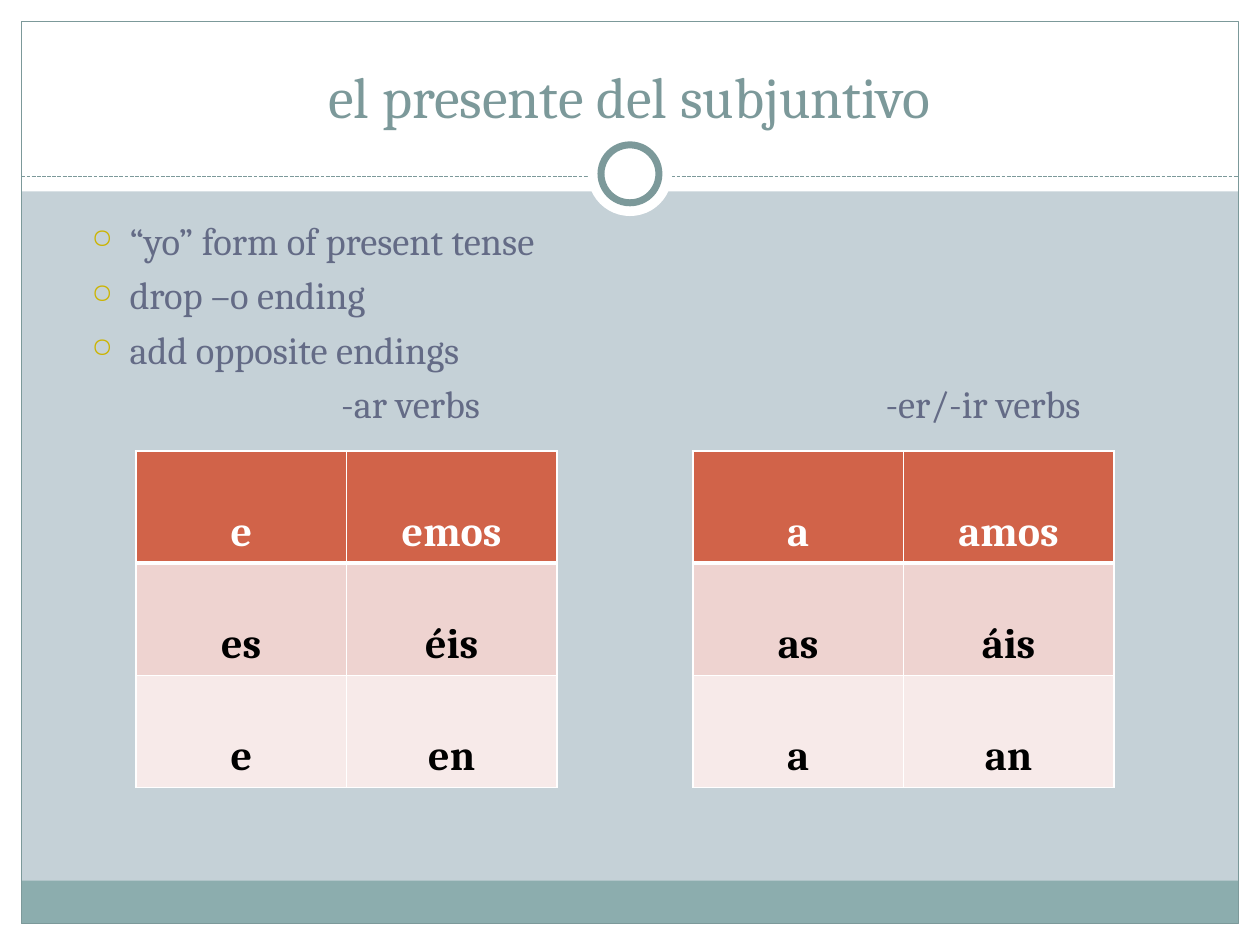
import pptx
import pptx.dml.color
import pptx.enum.dml
import pptx.enum.shapes
import pptx.enum.text
import pptx.oxml
import pptx.oxml.ns
import pptx.util
from lxml import etree

WIDTH, HEIGHT = 10, 7.5
MARGIN = 0.17
FONT = "Cambria"
WHITE, TEAL, FOOTER, BACKDROP = "FFFFFF", "7C999A", "8CADAE", "C5D1D7"
BODY, BULLET = "646B86", "CCB400"
ROW_FILLS = ["D16349", "EED3D0", "F7EAE9"]
ROW_COLORS = [WHITE, "000000", "000000"]

STEPS = ["“yo” form of present tense", "drop –o ending", "add opposite endings"]
# Label, label left, table left, endings
VERB_GROUPS = [
    ("-ar verbs", 2.61, 1.08, [["e", "emos"], ["es", "éis"], ["e", "en"]]),
    ("-er/-ir verbs", 6.93, 5.5, [["a", "amos"], ["as", "áis"], ["a", "an"]]),
]

inches = pptx.util.Inches
SHAPE = pptx.enum.shapes.MSO_SHAPE
ALIGN = pptx.enum.text.PP_ALIGN
ANCHOR = pptx.enum.text.MSO_ANCHOR


def color(value):
    return pptx.dml.color.RGBColor.from_string(value)


def add_xml(parent, tag, **attributes):
    element = etree.SubElement(parent, pptx.oxml.ns.qn(tag))
    for name, value in attributes.items():
        element.set(name, str(value))
    return element


def write_text(paragraph, text, size=22, ink=BODY, bold=False, align=ALIGN.LEFT):
    paragraph.alignment = align
    run = paragraph.add_run()
    run.text = text
    run.font.name = FONT
    run.font.size = pptx.util.Pt(size)
    run.font.bold = bold
    run.font.color.rgb = color(ink)


def add_text_frame(slide, left, top, width, height, anchor=ANCHOR.TOP):
    frame = slide.shapes.add_textbox(*map(inches, (left, top, width, height))).text_frame
    frame.word_wrap = True
    frame.vertical_anchor = anchor
    return frame


def add_panel(slide, left, top, width, height, kind=SHAPE.RECTANGLE,
              fill=None, line=None, weight=0.75):
    shape = slide.shapes.add_shape(kind, *map(inches, (left, top, width, height)))
    shape.shadow.inherit = False
    if fill:
        shape.fill.solid()
        shape.fill.fore_color.rgb = color(fill)
    else:
        shape.fill.background()
    if line:
        shape.line.color.rgb = color(line)
        shape.line.width = pptx.util.Pt(weight)
    else:
        shape.line.fill.background()


def add_circle(slide, center_y, diameter, **style):
    add_panel(slide, (WIDTH - diameter) / 2, center_y - diameter / 2,
              diameter, diameter, kind=SHAPE.OVAL, **style)


def add_dashed_rule(slide, y):
    rule = slide.shapes.add_connector(
        pptx.enum.shapes.MSO_CONNECTOR.STRAIGHT,
        *map(inches, (MARGIN, y, WIDTH - MARGIN, y)))
    rule.line.color.rgb = color(TEAL)
    rule.line.width = pptx.util.Pt(0.75)
    rule.line.dash_style = pptx.enum.dml.MSO_LINE.SQUARE_DOT
    add_xml(rule._element.spPr, "a:effectLst")


def add_frame(slide):
    inner_width, inner_height = WIDTH - 2 * MARGIN, HEIGHT - 2 * MARGIN
    # White margins and header
    for box in [(0, HEIGHT - MARGIN, WIDTH, MARGIN), (0, 0, WIDTH, 1.52),
                (0, 0, MARGIN, HEIGHT), (WIDTH - MARGIN, 0, MARGIN, HEIGHT)]:
        add_panel(slide, *box, fill=WHITE)
    # Footer band and outline
    add_panel(slide, MARGIN, 6.99, inner_width, 0.34, fill=FOOTER)
    add_panel(slide, MARGIN, MARGIN, inner_width, inner_height, line=TEAL)
    # Header rule with ring
    add_dashed_rule(slide, 1.4)
    add_circle(slide, 1.38, 0.67, fill=WHITE)
    add_circle(slide, 1.38, 0.46, fill=WHITE, line=TEAL, weight=4)


def add_steps(slide):
    frame = add_text_frame(slide, 0.33, 1.67, 9.3, 1.4)
    for index, step in enumerate(STEPS):
        paragraph = frame.paragraphs[0] if index == 0 else frame.add_paragraph()
        write_text(paragraph, step)
        paragraph.space_before = pptx.util.Pt(5)
        properties = paragraph._p.get_or_add_pPr()
        properties.set("marL", str(inches(0.6)))
        properties.set("indent", str(inches(-0.3)))
        add_xml(add_xml(properties, "a:buClr"), "a:srgbClr", val=BULLET)
        add_xml(properties, "a:buSzPct", val=70000)
        add_xml(properties, "a:buChar", char="○")


def set_borders(cell, top, bottom):
    properties = cell._tc.get_or_add_tcPr()
    weights = {"a:lnL": 1, "a:lnR": 1, "a:lnT": top, "a:lnB": bottom}
    for position, (side, weight) in enumerate(weights.items()):
        line = add_xml(properties, side, w=int(pptx.util.Pt(weight)))
        add_xml(add_xml(line, "a:solidFill"), "a:srgbClr", val=WHITE)
        properties.insert(position, line)


def add_endings_table(slide, left, endings):
    row_height, column_width = 0.89, 1.67
    rows, columns = len(endings), len(endings[0])
    table = slide.shapes.add_table(
        rows, columns, inches(left), inches(3.58),
        inches(columns * column_width), inches(rows * row_height)).table
    for row, words in enumerate(endings):
        for column, word in enumerate(words):
            cell = table.cell(row, column)
            cell.fill.solid()
            cell.fill.fore_color.rgb = color(ROW_FILLS[row])
            cell.vertical_anchor = ANCHOR.BOTTOM
            write_text(cell.text_frame.paragraphs[0], word, size=24,
                       ink=ROW_COLORS[row], bold=True, align=ALIGN.CENTER)
            set_borders(cell, top=3 if row == 1 else 1, bottom=3 if row == 0 else 1)


def main():
    presentation = pptx.Presentation()
    presentation.slide_width = inches(WIDTH)
    presentation.slide_height = inches(HEIGHT)
    slide = presentation.slides.add_slide(presentation.slide_layouts[6])
    slide.background.fill.solid()
    slide.background.fill.fore_color.rgb = color(BACKDROP)

    add_frame(slide)

    # Title
    title = add_text_frame(slide, 0.33, 0.25, 9.33, 0.83, anchor=ANCHOR.BOTTOM)
    write_text(title.paragraphs[0], "el presente del subjuntivo",
               size=33, ink=TEAL, align=ALIGN.CENTER)

    # Steps, then one labelled table per verb group
    add_steps(slide)
    for label, label_left, table_left, endings in VERB_GROUPS:
        frame = add_text_frame(slide, label_left, 2.97, 2.2, 0.46, anchor=ANCHOR.MIDDLE)
        write_text(frame.paragraphs[0], label)
        add_endings_table(slide, table_left, endings)

    presentation.save("out.pptx")


if __name__ == "__main__":
    main()
